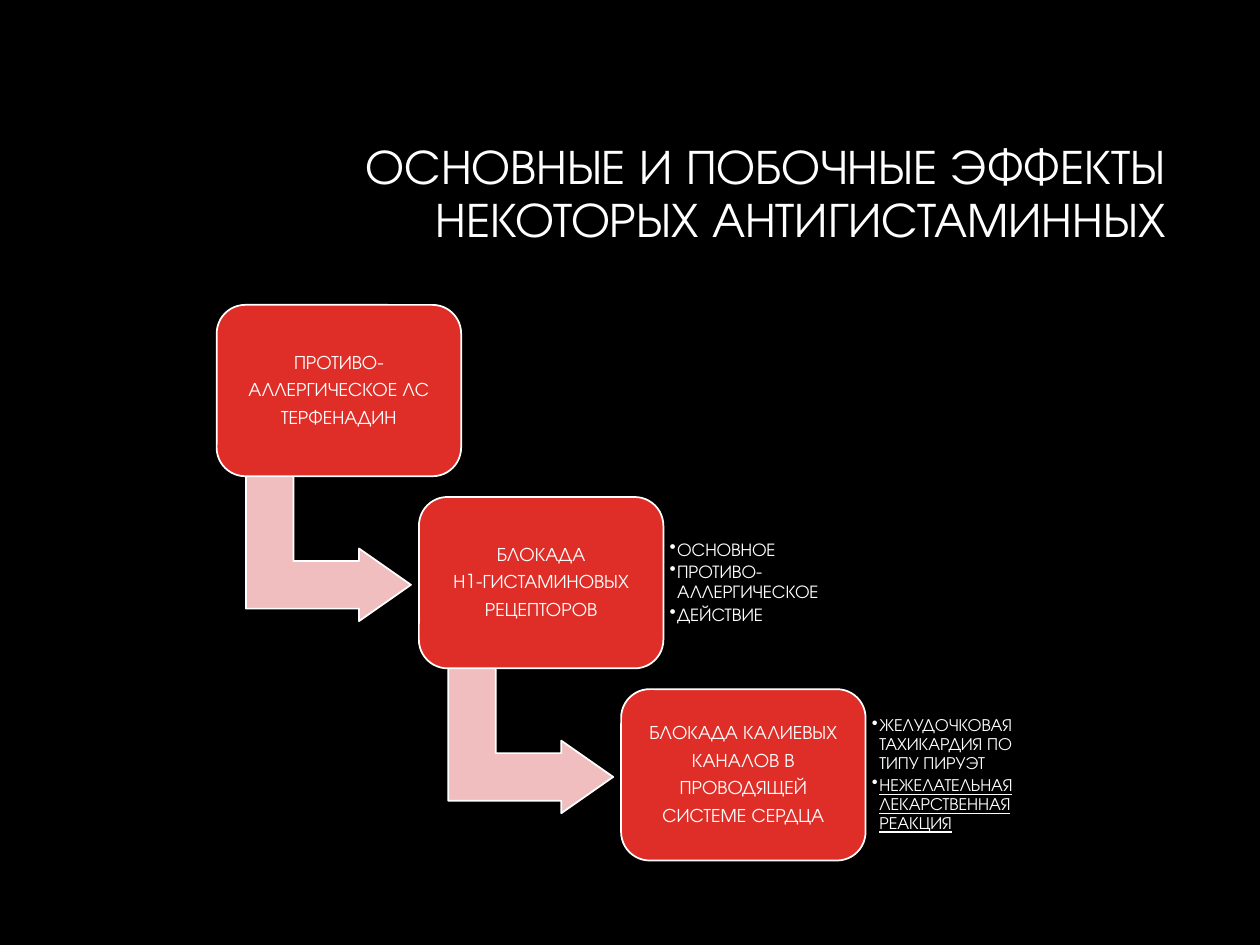
from lxml.etree import SubElement
from pptx import Presentation
from pptx.dml.color import RGBColor
from pptx.enum.shapes import MSO_SHAPE
from pptx.enum.text import MSO_ANCHOR, PP_ALIGN
from pptx.oxml.ns import qn
from pptx.util import Inches, Pt

FONT = "TeX Gyre Adventor"
WHITE, RED, PINK, BLACK = "FFFFFF", "DF2E28", "F0BEBE", "000000"
TITLE = "ОСНОВНЫЕ И ПОБОЧНЫЕ ЭФФЕКТЫ НЕКОТОРЫХ АНТИГИСТАМИННЫХ"
TITLE_BOX = (2.38, 0.84, 6.97, 1.41)
FIRST_STEP = (1.72, 2.42, 1.94, 1.36)
COLUMN_PITCH, ROW_PITCH = 1.605, 1.525
STEPS = [
    (["ПРОТИВО-", "АЛЛЕРГИЧЕСКОЕ ЛС", "ТЕРФЕНАДИН"], [], 0),
    (["БЛОКАДА", "Н1-ГИСТАМИНОВЫХ", "РЕЦЕПТОРОВ"],
     [("ОСНОВНОЕ", False), ("ПРОТИВО-АЛЛЕРГИЧЕСКОЕ", False), ("ДЕЙСТВИЕ", False)], 10.5),
    (["БЛОКАДА КАЛИЕВЫХ", "КАНАЛОВ В", "ПРОВОДЯЩЕЙ", "СИСТЕМЕ СЕРДЦА"],
     [("ЖЕЛУДОЧКОВАЯ ТАХИКАРДИЯ ПО ТИПУ ПИРУЭТ", False),
      ("НЕЖЕЛАТЕЛЬНАЯ ЛЕКАРСТВЕННАЯ РЕАКЦИЯ", True)], 10),
]


def color(value):
    """Turn a hex string into a colour."""
    return RGBColor.from_string(value)


def inches(box):
    """Turn a box in inches into slide lengths."""
    return [Inches(length) for length in box]


def part(box, left, top, width, height):
    """Return the part of a box given by shares of its size."""
    return (box[0] + left * box[2], box[1] + top * box[3], width * box[2], height * box[3])


def prepare_frame(frame, margin):
    """Wrap, centre vertically and set equal margins."""
    frame.word_wrap = True
    frame.vertical_anchor = MSO_ANCHOR.MIDDLE
    frame.margin_left = frame.margin_right = Inches(margin)
    frame.margin_top = frame.margin_bottom = Inches(margin)


def write(paragraph, text, size, align=PP_ALIGN.LEFT, gap=0, underline=False, bullet=False):
    """Write one formatted paragraph, with the gap after it as a share of its size."""
    paragraph.alignment = align
    paragraph.line_spacing = 0.9
    paragraph.space_before = Pt(0)
    paragraph.space_after = Pt(size * gap)
    if bullet:
        paragraph.level = 1
        properties = paragraph._p.get_or_add_pPr()
        properties.set("marL", str(Inches(0.06)))
        properties.set("indent", str(-Inches(0.06)))
        SubElement(properties, qn("a:buChar")).set("char", "•")
    run = paragraph.add_run()
    run.text = text
    run.font.name = FONT
    run.font.size = Pt(size)
    run.font.color.rgb = color(WHITE)
    if underline:
        run.font.underline = True


def next_paragraph(frame, index):
    """Return the first paragraph of a frame or a new one."""
    return frame.add_paragraph() if index else frame.paragraphs[0]


def add_block(slide, kind, box, fill, adjustments):
    """Add a filled preset shape with a thin white outline."""
    shape = slide.shapes.add_shape(kind, *inches(box))
    shape.shadow.inherit = False
    shape.fill.solid()
    shape.fill.fore_color.rgb = color(fill)
    shape.line.color.rgb = color(WHITE)
    shape.line.width = Pt(1)
    for index, value in enumerate(adjustments):
        shape.adjustments[index] = value
    return shape


def add_title(slide, box):
    """Place the title at the right of its box."""
    title = slide.shapes.title
    title.left, title.top, title.width, title.height = inches(box)
    prepare_frame(title.text_frame, 0.1)
    write(title.text_frame.paragraphs[0], TITLE, 28, align=PP_ALIGN.RIGHT)


def add_arrow(slide, box):
    """Lead from the bottom of a step to the next one."""
    arrow = add_block(slide, MSO_SHAPE.BENT_UP_ARROW, part(box, 0.16, 0.94, 0.594, 0.963),
                      PINK, (0.328, 0.25, 0.358))
    arrow.rotation = 90


def add_step(slide, box, lines):
    """Place a rounded box with its centred lines."""
    step = add_block(slide, MSO_SHAPE.ROUNDED_RECTANGLE, box, RED, (0.167,))
    prepare_frame(step.text_frame, 0.05)
    for index, line in enumerate(lines):
        write(next_paragraph(step.text_frame, index), line, 11, align=PP_ALIGN.CENTER, gap=0.35)


def add_effects(slide, box, effects, size):
    """Place the bulleted effects to the right of a step."""
    text_box = slide.shapes.add_textbox(*inches(part(box, 1, 0.095, 0.727, 0.81)))
    prepare_frame(text_box.text_frame, 0.05)
    for index, (text, underline) in enumerate(effects):
        write(next_paragraph(text_box.text_frame, index), text, size, gap=0.15,
              underline=underline, bullet=True)


def add_staircase(slide, first_box):
    """Place the steps down a diagonal, joined by arrows."""
    left, top, width, height = first_box
    for index, (lines, effects, size) in enumerate(STEPS):
        box = (left + index * COLUMN_PITCH, top + index * ROW_PITCH, width, height)
        if index < len(STEPS) - 1:
            add_arrow(slide, box)
        add_step(slide, box, lines)
        if effects:
            add_effects(slide, box, effects, size)


def main():
    """Build and save the presentation."""
    presentation = Presentation()
    presentation.slide_width, presentation.slide_height = inches((10, 7.5))
    slide = presentation.slides.add_slide(presentation.slide_layouts[5])
    slide.background.fill.solid()
    slide.background.fill.fore_color.rgb = color(BLACK)
    add_title(slide, TITLE_BOX)
    add_staircase(slide, FIRST_STEP)
    presentation.save("out.pptx")


if __name__ == "__main__":
    main()
